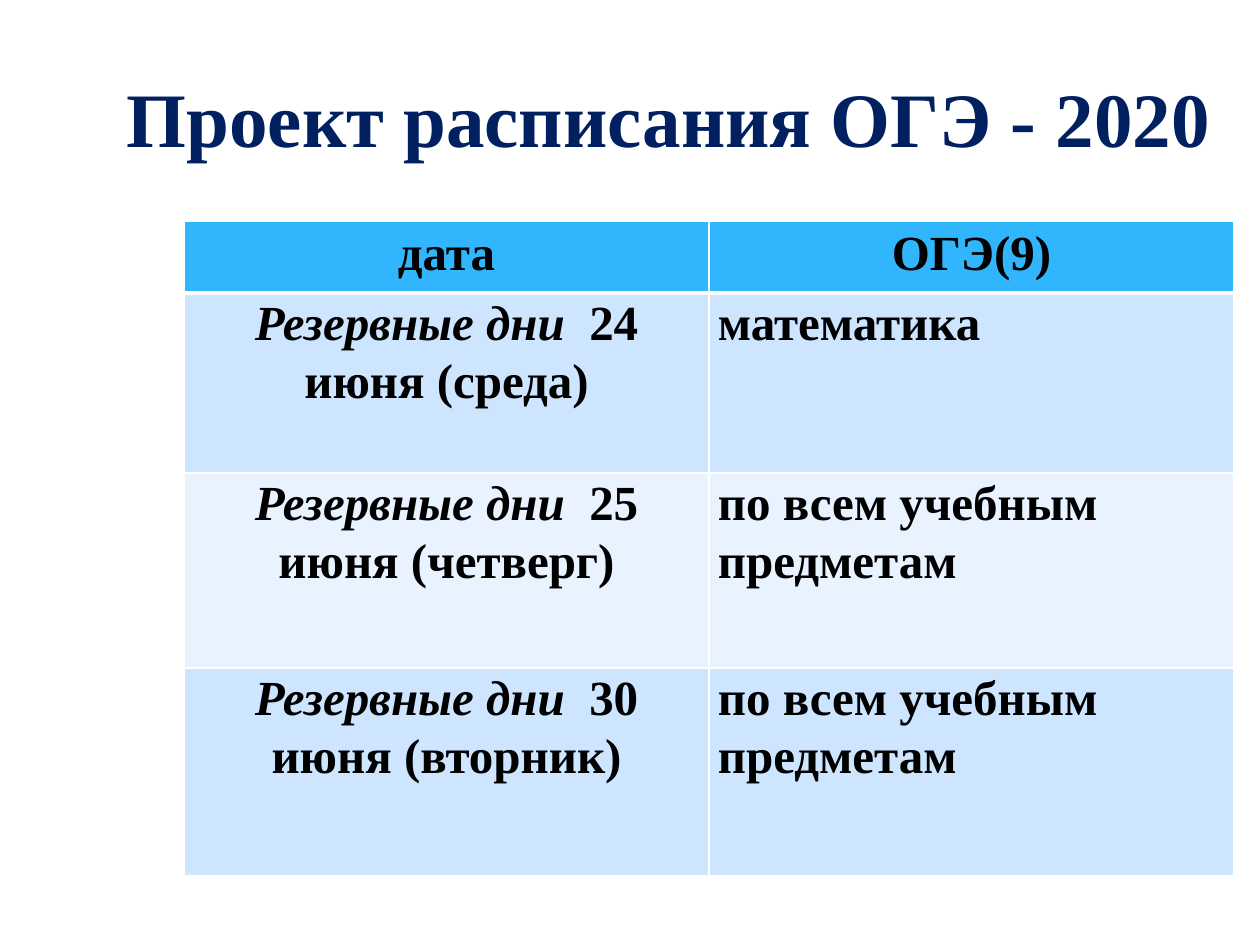
from lxml import etree
from pptx import Presentation
from pptx.dml.color import RGBColor
from pptx.enum.text import MSO_ANCHOR, MSO_AUTO_SIZE, PP_ALIGN
from pptx.oxml.ns import qn
from pptx.util import Emu, Pt

LEFT, CENTER, RIGHT = PP_ALIGN.LEFT, PP_ALIGN.CENTER, PP_ALIGN.RIGHT
MIDDLE = MSO_ANCHOR.MIDDLE
NO_AUTOFIT = MSO_AUTO_SIZE.NONE

WHITE = RGBColor(0xFF, 0xFF, 0xFF)
BLACK = RGBColor(0x00, 0x00, 0x00)
NAVY = RGBColor(0x00, 0x20, 0x60)
HEADER_BLUE = RGBColor(0x31, 0xB6, 0xFD)
BAND_DARK = RGBColor(0xCD, 0xE5, 0xFE)
BAND_LIGHT = RGBColor(0xE8, 0xF3, 0xFF)

FONT = "Times New Roman"
PX_PER_INCH = 126
ROW_HEIGHTS = [72, 180, 195, 208]
COLUMN_WIDTH = 525
RESERVE = "Резервные дни"
ALL_SUBJECTS = "по всем учебным предметам"
HEADINGS = ["дата", "ОГЭ(9)"]
EXAMS = [
    ("24 июня (среда)", "математика"),
    ("25 июня (четверг)", ALL_SUBJECTS),
    ("30 июня (вторник)", ALL_SUBJECTS),
]


def px(n):
    return Emu(round(n * 914400 / PX_PER_INCH))


def add_text(p, text, size=28, color=BLACK, italic=False, align=LEFT, spacing=None):
    p.alignment = align
    if spacing:
        p.line_spacing = spacing
    r = p.add_run()
    r.text = text
    r.font.name = FONT
    r.font.size = Pt(size)
    r.font.bold = True
    r.font.italic = italic
    r.font.color.rgb = color


class SlideBuilder:
    def __init__(self, prs, line_color=WHITE):
        self.slide = prs.slides.add_slide(prs.slide_layouts[5])
        self.line_color = line_color

    def title(self, text, x, y, w, h):
        sp = self.slide.shapes.title
        sp.left, sp.top, sp.width, sp.height = px(x), px(y), px(w), px(h)
        sp.fill.solid()
        sp.fill.fore_color.rgb = WHITE
        sp.line.color.rgb = self.line_color
        sp.line.width = Pt(1.5)
        tf = sp.text_frame
        tf.auto_size = NO_AUTOFIT
        tf.word_wrap = True
        tf.vertical_anchor = MIDDLE
        add_text(tf.paragraphs[0], text, size=44, color=NAVY, align=RIGHT)

    def table(self, x, y, col_widths, row_heights):
        frame = self.slide.shapes.add_table(
            len(row_heights), len(col_widths), px(x), px(y),
            px(sum(col_widths)), px(sum(row_heights)))
        table = frame.table
        for column, width in zip(table.columns, col_widths):
            column.width = px(width)
        for row, height in zip(table.rows, row_heights):
            row.height = px(height)
        return table

    def cell(self, cell, fill, runs, align=LEFT, spacing=None, margins=(9, 0), top=1, bottom=1):
        cell.margin_left = cell.margin_right = px(margins[0])
        cell.margin_top = cell.margin_bottom = px(margins[1])
        self.borders(cell, lnL=1, lnR=1, lnT=top, lnB=bottom)
        cell.fill.solid()
        cell.fill.fore_color.rgb = fill
        for text, italic in runs:
            add_text(cell.text_frame.paragraphs[0], text, italic=italic,
                     align=align, spacing=spacing)

    def borders(self, cell, **widths):
        tc_pr = cell._tc.get_or_add_tcPr()
        for side, width in widths.items():
            ln = etree.SubElement(tc_pr, qn(f"a:{side}"), w=str(Pt(width)))
            solid = etree.SubElement(ln, qn("a:solidFill"))
            etree.SubElement(solid, qn("a:srgbClr"), val=str(self.line_color))


def main():
    """Build the exam timetable slide."""
    prs = Presentation()
    prs.slide_width, prs.slide_height = px(1260), px(945)
    s = SlideBuilder(prs)
    s.title("Проект расписания ОГЭ - 2020", 64, 38, 1160, 158)
    table = s.table(184, 221, [COLUMN_WIDTH] * 2, ROW_HEIGHTS)
    for col, heading in enumerate(HEADINGS):
        s.cell(table.cell(0, col), HEADER_BLUE, [(heading, False)],
               align=CENTER, margins=(13, 6), bottom=3)
    for row, (date, subject) in enumerate(EXAMS, 1):
        fill = BAND_DARK if row % 2 else BAND_LIGHT
        top = 3 if row == 1 else 1
        s.cell(table.cell(row, 0), fill, [(RESERVE, True), (f"  {date}", False)],
               align=CENTER, spacing=1.07, top=top)
        s.cell(table.cell(row, 1), fill, [(subject, False)], spacing=1.07, top=top)
    prs.save("out.pptx")


if __name__ == "__main__":
    main()
